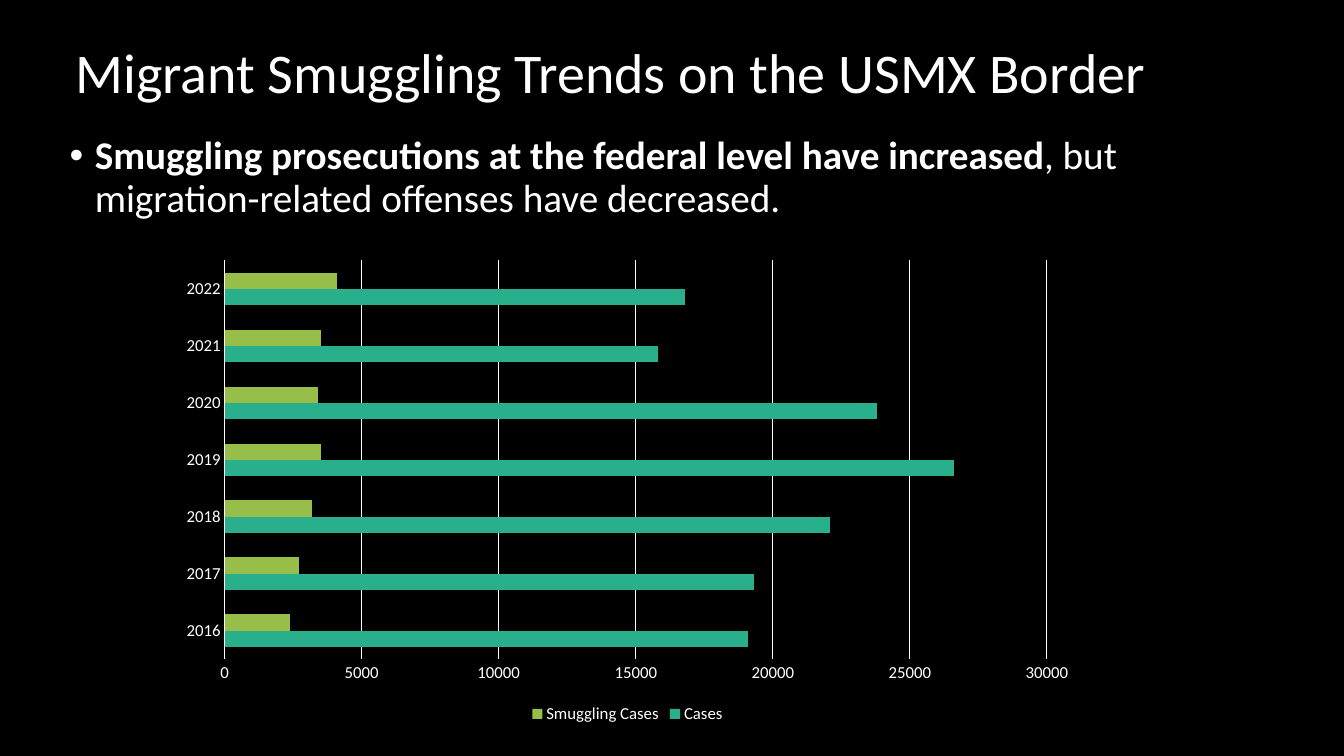
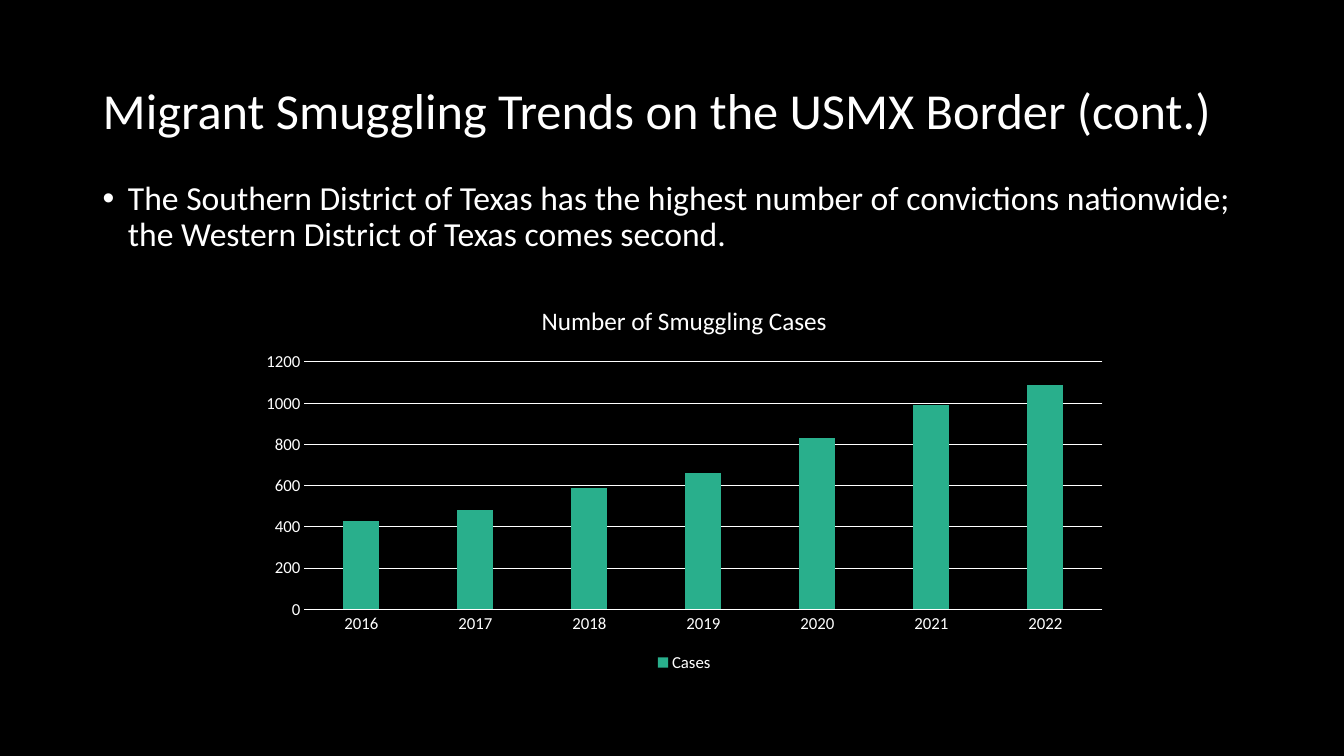
from pptx import Presentation
from pptx.chart.data import CategoryChartData
from pptx.dml.color import RGBColor
from pptx.enum import chart as ch, text as tx
from pptx.util import Pt

BLACK = RGBColor(0x00, 0x00, 0x00)
WHITE = RGBColor(0xFF, 0xFF, 0xFF)
TEAL = RGBColor(0x29, 0xAF, 0x8C)
GREEN = RGBColor(0x97, 0xBE, 0x49)
FONT = "Calibri"
YEARS = [str(year) for year in range(2016, 2023)]


def write(placeholder, runs, box, size, anchor, space_before=0, bullet=False):
    """Place a placeholder and fill it with (text, bold) runs."""
    placeholder.left, placeholder.top, placeholder.width, placeholder.height = map(Pt, box)
    frame = placeholder.text_frame
    frame.vertical_anchor = anchor
    frame.word_wrap = True
    frame.auto_size = tx.MSO_AUTO_SIZE.NONE
    paragraph = frame.paragraphs[0]
    paragraph.alignment = tx.PP_ALIGN.LEFT
    paragraph.line_spacing = 0.9
    paragraph.space_before = Pt(space_before)
    if bullet:  # the bullet sign itself comes from the template
        properties = paragraph._p.get_or_add_pPr()
        properties.set("marL", str(Pt(18)))
        properties.set("indent", str(Pt(-18)))
    for words, bold in runs:
        run = paragraph.add_run()
        run.text = words
        run.font.name, run.font.size, run.font.bold = FONT, Pt(size), bold
        run.font.color.rgb = WHITE


def style_font(font, size):
    font.name, font.size, font.bold = FONT, Pt(size), False
    font.color.rgb = WHITE


# Content: one entry per slide
SLIDES = [
    dict(
        title="Migrant Smuggling Trends on the USMX Border",
        title_box=(46.8, 1.5, 828, 104.4), title_size=40,
        body=[("Smuggling prosecutions at the federal level have increased", True),
              (", but migration-related offenses have decreased.", False)],
        body_box=(42.5, 93.6, 836.6, 380), body_size=28,
        chart_type=ch.XL_CHART_TYPE.BAR_CLUSTERED, chart_title=None,
        chart_box=(120.2, 179.3, 656, 340.6),
        series=[("Cases", [19100, 19300, 22100, 26600, 23800, 15800, 16800], TEAL),
                ("Smuggling Cases", [2400, 2700, 3200, 3500, 3400, 3500, 4100], GREEN)],
        gap=150, overlap=0, top_value=30000, step=5000,
    ),
    dict(
        title="Migrant Smuggling Trends on the USMX Border (cont.)",
        title_box=(66.2, 28.8, 828, 104.4), title_size=36,
        body=[("The Southern District of Texas has the highest number of convictions "
               "nationwide; the Western District of Texas comes second.", False)],
        body_box=(66.2, 126, 828, 378.7), body_size=24,
        chart_type=ch.XL_CHART_TYPE.COLUMN_CLUSTERED,
        chart_title="Number of Smuggling Cases",
        chart_box=(177.8, 203.8, 622, 279.4),
        series=[("Cases", [430, 480, 590, 660, 830, 990, 1090], TEAL)],
        gap=219, overlap=-27, top_value=1200, step=200,
    ),
]

# Presentation and shared background
prs = Presentation()
prs.slide_width, prs.slide_height = Pt(960), Pt(540)
backdrop = prs.slide_master.background.fill
backdrop.solid()
backdrop.fore_color.rgb = BLACK

for content in SLIDES:
    slide = prs.slides.add_slide(prs.slide_layouts[1])

    # Title and statement
    write(slide.shapes.title, [(content["title"], False)], content["title_box"],
          content["title_size"], tx.MSO_ANCHOR.MIDDLE)
    write(slide.placeholders[1], content["body"], content["body_box"],
          content["body_size"], tx.MSO_ANCHOR.TOP, space_before=10, bullet=True)

    # Chart data
    cases = CategoryChartData()
    cases.categories = YEARS
    for name, values, _ in content["series"]:
        cases.add_series(name, values)
    trend = slide.shapes.add_chart(
        content["chart_type"], *map(Pt, content["chart_box"]), cases).chart
    style_font(trend.font, 10)

    # Chart title and legend
    trend.has_title = content["chart_title"] is not None
    if trend.has_title:
        heading = trend.chart_title.text_frame
        heading.text = content["chart_title"]
        style_font(heading.paragraphs[0].runs[0].font, 18)
    trend.has_legend = True
    trend.legend.position = ch.XL_LEGEND_POSITION.BOTTOM
    trend.legend.include_in_layout = False
    style_font(trend.legend.font, 12)

    # Bars
    bars = trend.plots[0]
    bars.vary_by_categories = False
    bars.gap_width, bars.overlap = content["gap"], content["overlap"]
    for series, (_, _, color) in zip(bars.series, content["series"]):
        series.format.fill.solid()
        series.format.fill.fore_color.rgb = color

    # Axes and gridlines
    years, counts = trend.category_axis, trend.value_axis
    for axis in (years, counts):
        axis.major_tick_mark = axis.minor_tick_mark = ch.XL_TICK_MARK.NONE
        style_font(axis.tick_labels.font, 12)
    years.has_major_gridlines = False
    counts.has_major_gridlines = True
    for line in (years.format.line, counts.major_gridlines.format.line):
        line.color.rgb = WHITE
        line.width = Pt(0.75)
    counts.format.line.fill.background()
    counts.minimum_scale, counts.maximum_scale = 0, content["top_value"]
    counts.major_unit = content["step"]

prs.save("out.pptx")
